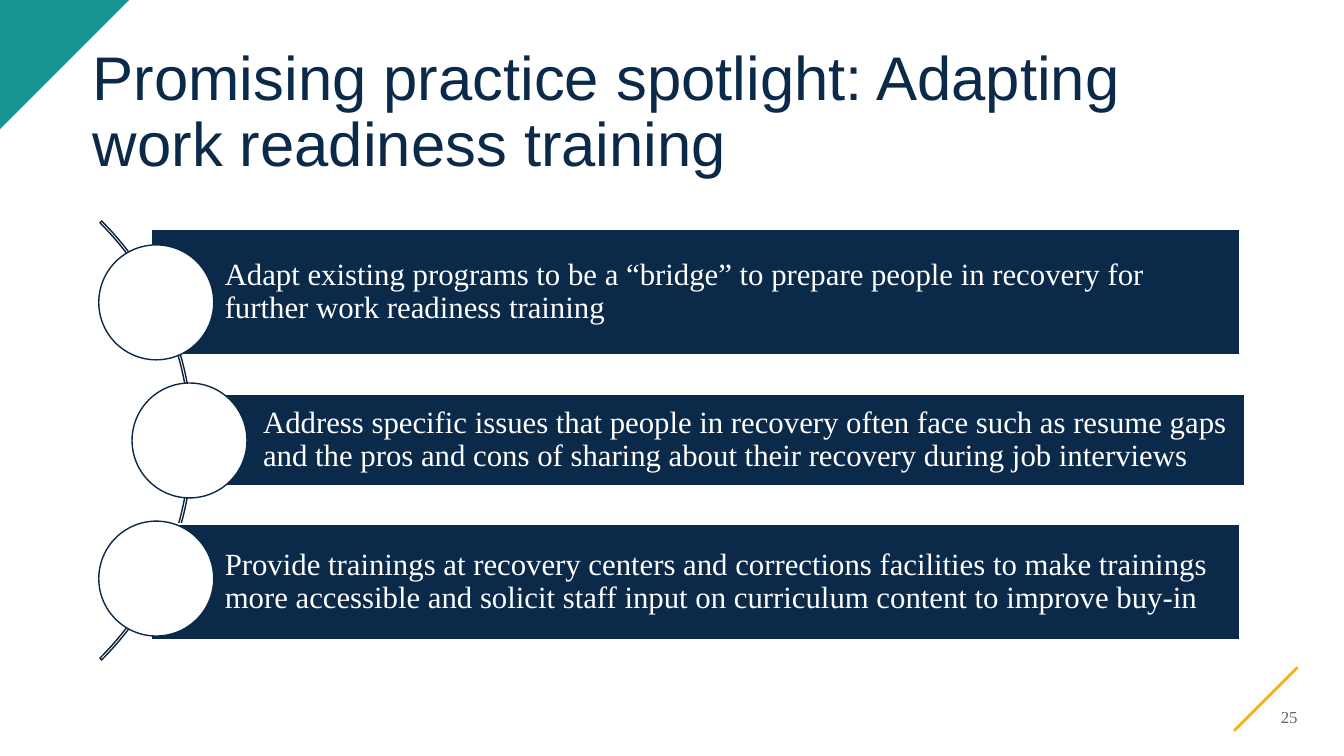
from lxml import etree
from pptx import Presentation
from pptx.dml.color import RGBColor
from pptx.enum.shapes import MSO_CONNECTOR, MSO_SHAPE
from pptx.enum.text import MSO_ANCHOR, PP_ALIGN
from pptx.oxml.ns import qn
from pptx.util import Inches, Pt

MIDDLE = MSO_ANCHOR.MIDDLE
LEFT, RIGHT = PP_ALIGN.LEFT, PP_ALIGN.RIGHT
STRAIGHT = MSO_CONNECTOR.STRAIGHT
ARC, RECTANGLE, CIRCLE = MSO_SHAPE.BLOCK_ARC, MSO_SHAPE.RECTANGLE, MSO_SHAPE.OVAL

COLORS = {
    "navy": "0B2949", "arc": "09213A", "teal": "189394",
    "gold": "F1B51C", "gray": "5B6771", "white": "FFFFFF",
}


def write_text(box, text, font, size, color, align=LEFT, spacing=1.0, margins=(0, 0, 0, 0)):
    frame = box.text_frame
    frame.word_wrap = True
    frame.vertical_anchor = MIDDLE
    for side, margin in zip(("left", "top", "right", "bottom"), margins):
        setattr(frame, f"margin_{side}", Inches(margin))
    para = frame.paragraphs[0]
    para.alignment = align
    para.line_spacing = spacing
    span = para.add_run()
    span.text = text
    span.font.color.rgb = RGBColor.from_string(COLORS[color])
    for name, value in {"name": font, "size": Pt(size), "bold": False}.items():
        setattr(span.font, name, value)


def style_shape(shape, fill, line):
    shape.shadow.inherit = False
    if fill:
        shape.fill.solid()
        shape.fill.fore_color.rgb = RGBColor.from_string(COLORS[fill])
    else:
        shape.fill.background()
    if line:
        shape.line.color.rgb = RGBColor.from_string(COLORS[line])
        shape.line.width = Pt(1)
    else:
        shape.line.fill.background()


deck = Presentation()
deck.slide_width, deck.slide_height = Inches(13.33), Inches(7.5)
page = deck.slides.add_slide(deck.slide_layouts[5])
shapes = page.shapes

title = shapes.title
title.left, title.top = Inches(0.92), Inches(0.4)
title.width, title.height = Inches(11.5), Inches(1.45)
write_text(title, "Promising practice spotlight: Adapting work readiness training",
           "Arial", 44, "navy", spacing=0.9)

accent = shapes.add_connector(STRAIGHT, Inches(12.24), Inches(7.25), Inches(12.87), Inches(6.62))
accent.line.color.rgb = RGBColor.from_string(COLORS["gold"])
accent.line.width = Pt(2)
etree.SubElement(accent._element.spPr, qn("a:effectLst"))

outline = shapes.build_freeform(0, 0)
outline.add_line_segments([(Inches(1.28), 0), (0, Inches(1.28))], close=True)
style_shape(outline.convert_to_shape(), "teal", None)

number = shapes.add_textbox(Inches(12.3), Inches(6.74), Inches(0.57), Inches(0.75))
write_text(number, "25", "Times New Roman", 12, "gray", align=RIGHT)

arc = shapes.add_shape(ARC, Inches(-4.25), Inches(1.29), Inches(6.16), Inches(6.16))
for index, value in enumerate((189, 27, 0.004)):
    arc.adjustments[index] = value
style_shape(arc, None, "arc")

CIRCLE_SIZE = 1.14
FIRST_CIRCLE_TOP, CIRCLE_STEP = 2.43, 1.37
practices = [
    (1.5, 2.27, 10.8, 1.25, 0.98,
     "Adapt existing programs to be a “bridge” to prepare people in recovery for "
     "further work readiness training"),
    (1.88, 3.91, 10.47, 0.91, 1.31,
     "Address specific issues that people in recovery often face such as resume gaps "
     "and the pros and cons of sharing about their recovery during job interviews"),
    (1.5, 5.2, 10.8, 1.15, 0.98,
     "Provide trainings at recovery centers and corrections facilities to make trainings "
     "more accessible and solicit staff input on curriculum content to improve buy-in"),
]
for row, (left, top, width, height, circle_left, text) in enumerate(practices):
    bar = shapes.add_shape(RECTANGLE, Inches(left), Inches(top), Inches(width), Inches(height))
    style_shape(bar, "navy", "white")
    write_text(bar, text, "Times New Roman", 22, "white", spacing=0.9,
               margins=(0.73, 0.06, 0.06, 0.06))
    circle = shapes.add_shape(CIRCLE, Inches(circle_left),
                              Inches(FIRST_CIRCLE_TOP + row * CIRCLE_STEP),
                              Inches(CIRCLE_SIZE), Inches(CIRCLE_SIZE))
    style_shape(circle, "white", "navy")

deck.save("out.pptx")
